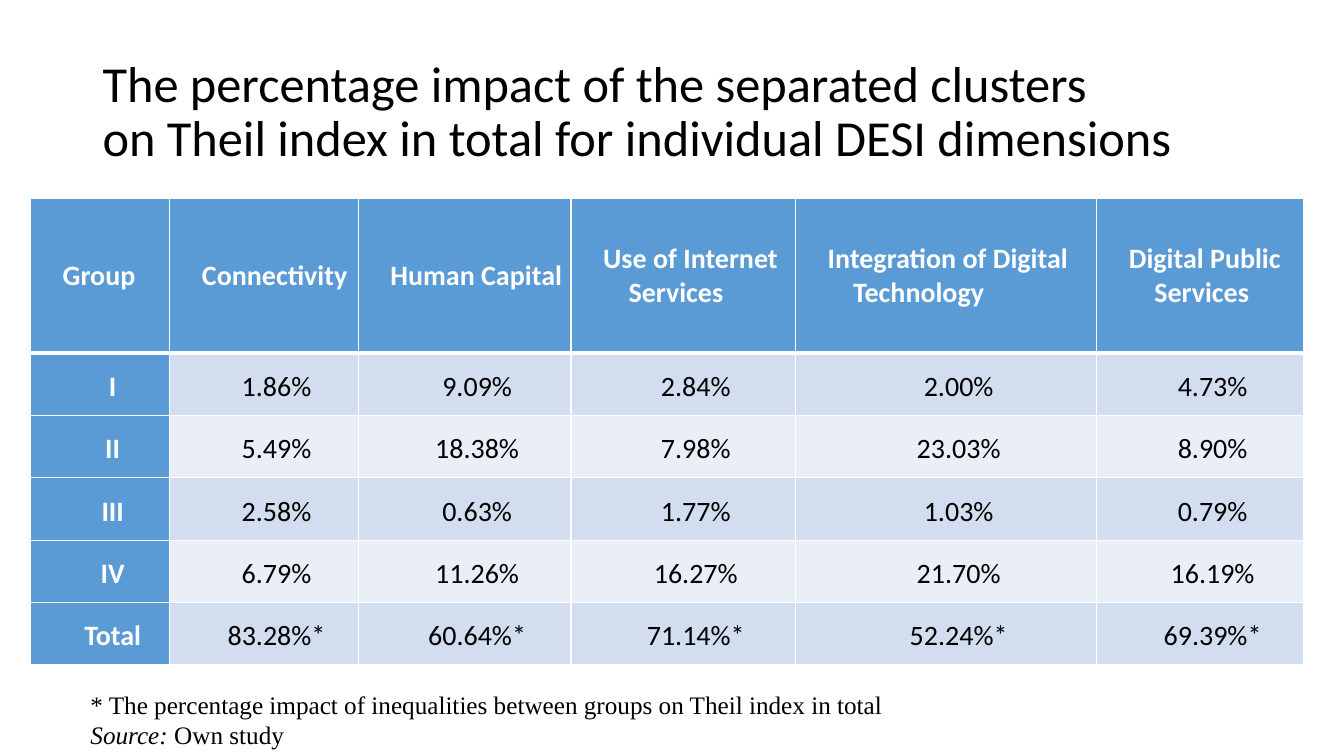
from lxml import etree
from pptx import Presentation
from pptx.dml.color import RGBColor
from pptx.enum.text import MSO_ANCHOR as ANCHOR, MSO_AUTO_SIZE as AUTO, PP_ALIGN as ALIGN
from pptx.oxml.ns import qn
from pptx.util import Cm, Pt

BLACK = RGBColor(0x00, 0x00, 0x00)
WHITE = RGBColor(0xFF, 0xFF, 0xFF)
BLUE = RGBColor(0x5B, 0x9B, 0xD5)
BAND_DARK = RGBColor(0xD2, 0xDE, 0xEF)
BAND_LIGHT = RGBColor(0xEA, 0xEF, 0xF7)

TITLE = ("The percentage impact of the separated clusters \v"
         "on Theil index in total for individual DESI dimensions")
ROWS = [
    ["Group", "Connectivity", "Human Capital", "Use of Internet Services",
     "Integration of Digital Technology", "Digital Public Services"],
    ["I", "1.86%", "9.09%", "2.84%", "2.00%", "4.73%"],
    ["II", "5.49%", "18.38%", "7.98%", "23.03%", "8.90%"],
    ["III", "2.58%", "0.63%", "1.77%", "1.03%", "0.79%"],
    ["IV", "6.79%", "11.26%", "16.27%", "21.70%", "16.19%"],
    ["Total", "83.28%*", "60.64%*", "71.14%*", "52.24%*", "69.39%*"],
]
COL_WIDTHS = [3.51, 4.75, 5.36, 5.66, 7.59, 5.21]
ROW_HEIGHTS = [3.89] + [1.57] * 5
NOTES = [
    (1.15, [("* The percentage impact of inequalities between groups on Theil index in total", False)]),
    (1.0, [("Source: ", True), ("Own study", False)]),
]


def apply(target, values):
    for name, value in values.items():
        setattr(target, name, value)


class SlideBuilder:
    body_font = "Calibri"
    note_font = "Times New Roman"

    def __init__(self, prs):
        self.s = prs.slides.add_slide(prs.slide_layouts[5])

    def font(self, r, color, **values):
        apply(r.font, values)
        r.font.color.rgb = color

    def title(self, text, left, top, width, height):
        sp = self.s.shapes.title
        apply(sp, dict(left=Cm(left), top=Cm(top), width=Cm(width), height=Cm(height)))
        tf = sp.text_frame
        apply(tf, dict(text=text, word_wrap=True, auto_size=AUTO.NONE, vertical_anchor=ANCHOR.MIDDLE))
        p = tf.paragraphs[0]
        apply(p, dict(alignment=ALIGN.LEFT, line_spacing=0.9))
        for r in p.runs:
            self.font(r, BLACK, name=self.body_font, size=Pt(36))

    def borders(self, cell, **widths):
        tc_pr = cell._tc.get_or_add_tcPr()
        for side, width in widths.items():
            ln = etree.SubElement(tc_pr, qn(f"a:ln{side}"), w=str(Pt(width)))
            fill = etree.SubElement(ln, qn("a:solidFill"))
            etree.SubElement(fill, qn("a:srgbClr"), val=str(WHITE))

    def cell(self, cell, text, row, col):
        header = row == 0
        strong = header or col == 0
        self.borders(cell, L=1, R=1, T=3 if row == 1 else 1, B=3 if header else 1)
        cell.fill.solid()
        cell.fill.fore_color.rgb = BLUE if strong else BAND_DARK if row % 2 else BAND_LIGHT
        apply(cell, dict(text=text, vertical_anchor=ANCHOR.MIDDLE, margin_left=Cm(0.18),
                         margin_right=Cm(0.18), margin_top=0, margin_bottom=0))
        p = cell.text_frame.paragraphs[0]
        apply(p, dict(alignment=ALIGN.LEFT if header else ALIGN.CENTER,
                      line_spacing=1.0 if header else 1.15, space_before=Pt(12)))
        apply_indent = p._p.get_or_add_pPr().set
        apply_indent("marL", str(Cm(1.27)))
        apply_indent("indent", str(Cm(-0.64)))
        self.font(p.runs[0], WHITE if strong else BLACK,
                  name=self.body_font, size=Pt(20), bold=strong)

    def table(self, rows, left, top, widths, heights):
        table = self.s.shapes.add_table(len(rows), len(widths), Cm(left), Cm(top),
                                        Cm(sum(widths)), Cm(sum(heights))).table
        table.first_col = True
        for column, width in zip(table.columns, widths):
            column.width = Cm(width)
        for row, height in zip(table.rows, heights):
            row.height = Cm(height)
        for i, texts in enumerate(rows):
            for j, text in enumerate(texts):
                self.cell(table.cell(i, j), text, i, j)

    def notes(self, paragraphs, left, top, width, height):
        tf = self.s.shapes.add_textbox(Cm(left), Cm(top), Cm(width), Cm(height)).text_frame
        apply(tf, dict(word_wrap=True, auto_size=AUTO.SHAPE_TO_FIT_TEXT))
        for i, (spacing, runs) in enumerate(paragraphs):
            p = tf.add_paragraph() if i else tf.paragraphs[0]
            p.line_spacing = spacing
            for text, italic in runs:
                r = p.add_run()
                r.text = text
                self.font(r, BLACK, name=self.note_font, size=Pt(18), italic=italic)


def main():
    prs = Presentation()
    apply(prs, dict(slide_width=Cm(33.87), slide_height=Cm(19.05)))
    slide = SlideBuilder(prs)
    slide.title(TITLE, 2.33, 1.01, 29.21, 3.68)
    slide.table(ROWS, 0.77, 5.01, COL_WIDTHS, ROW_HEIGHTS)
    slide.notes(NOTES, 2.03, 17.12, 23.37, 1.9)
    prs.save("out.pptx")


if __name__ == "__main__":
    main()
